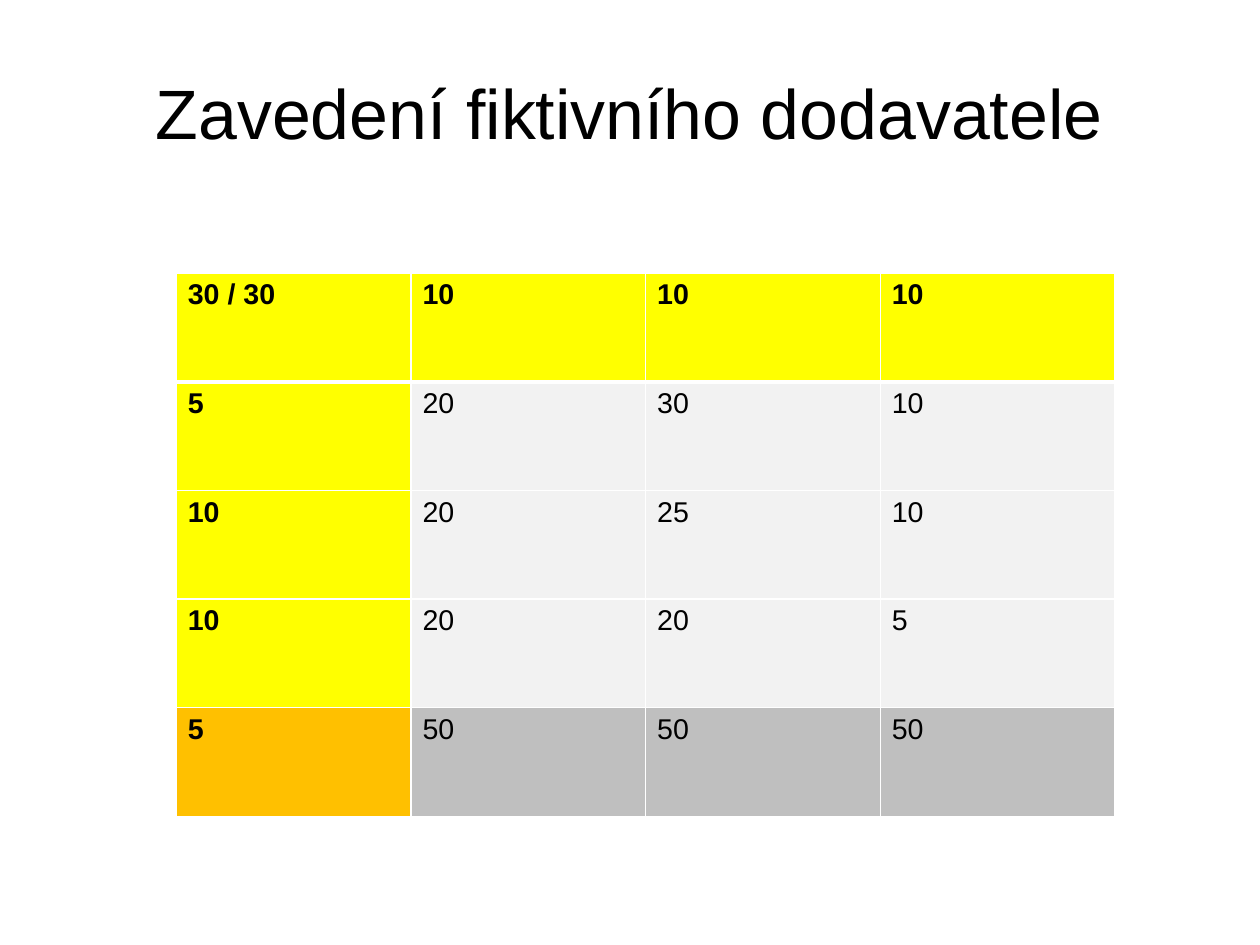
"""Build a slide with a transportation table that includes a fictitious supplier."""
from dataclasses import dataclass
from typing import Any

from lxml import etree
from pptx import Presentation
from pptx import util as u
from pptx.dml.color import RGBColor
from pptx.enum import text
from pptx.oxml import ns


@dataclass(frozen=True)
class Theme:
    font: str = "Arial"
    ink: str = "000000"
    border: str = "FFFFFF"
    heading: str = "FFFF00"
    body: str = "F2F2F2"
    fictitious_heading: str = "FFC000"
    fictitious_body: str = "BFBFBF"
    title_size: int = 44
    cell_size: int = 18
    thin: int = 1
    thick: int = 3


@dataclass(frozen=True)
class Area:
    left: float
    top: float
    width: float
    height: float

    def place(self, deck: Any) -> tuple[int, ...]:
        across, down = deck.slide_width / 100, deck.slide_height / 100
        return (round(self.left * across), round(self.top * down),
                round(self.width * across), round(self.height * down))


@dataclass(frozen=True)
class Supplier:
    values: tuple[str, ...]
    heading_fill: str
    body_fill: str


THEME = Theme()
TITLE_AREA = Area(5, 4, 90, 16.7)
TABLE_AREA = Area(14, 28.9, 74.5, 57.5)
ROWS = (
    Supplier(("30 / 30", "10", "10", "10"), THEME.heading, THEME.heading),
    Supplier(("5", "20", "30", "10"), THEME.heading, THEME.body),
    Supplier(("10", "20", "25", "10"), THEME.heading, THEME.body),
    Supplier(("10", "20", "20", "5"), THEME.heading, THEME.body),
    Supplier(("5", "50", "50", "50"), THEME.fictitious_heading, THEME.fictitious_body),
)


def apply(target: Any, formats: dict[str, Any]) -> None:
    for name, value in formats.items():
        setattr(target, name, value)


def write(para: Any, words: str, size: int, bold: bool = False) -> None:
    span = para.add_run()
    span.text = words
    apply(span.font, {"name": THEME.font, "size": u.Pt(size), "bold": bold})
    span.font.color.rgb = RGBColor.from_string(THEME.ink)


def add_title(deck: Any, page: Any, words: str) -> None:
    frame = page.shapes.add_textbox(*TITLE_AREA.place(deck)).text_frame
    apply(frame, {"word_wrap": True, "vertical_anchor": text.MSO_ANCHOR.MIDDLE,
                  "margin_left": 0, "margin_right": 0, "margin_top": 0, "margin_bottom": 0})
    para = frame.paragraphs[0]
    apply(para, {"alignment": text.PP_ALIGN.CENTER, "line_spacing": 0.9})
    write(para, words, THEME.title_size)


def add_borders(cell: Any, row: int) -> None:
    widths = {"lnL": THEME.thin, "lnR": THEME.thin,
              "lnT": THEME.thick if row == 1 else THEME.thin,
              "lnB": THEME.thick if row == 0 else THEME.thin}
    properties = cell._tc.get_or_add_tcPr()
    for index, (side, width) in enumerate(widths.items()):
        line = etree.Element(ns.qn(f"a:{side}"), w=str(u.Pt(width)))
        fill = etree.SubElement(line, ns.qn("a:solidFill"))
        etree.SubElement(fill, ns.qn("a:srgbClr"), val=THEME.border)
        properties.insert(index, line)


def add_supplier_table(deck: Any, page: Any) -> None:
    table = page.shapes.add_table(len(ROWS), len(ROWS[0].values), *TABLE_AREA.place(deck)).table
    apply(table, {"first_col": True, "horz_banding": False})
    for row, supplier in enumerate(ROWS):
        for column, value in enumerate(supplier.values):
            cell = table.cell(row, column)
            color = supplier.body_fill if column else supplier.heading_fill
            cell.fill.solid()
            cell.fill.fore_color.rgb = RGBColor.from_string(color)
            write(cell.text_frame.paragraphs[0], value, THEME.cell_size, row == 0 or column == 0)
            add_borders(cell, row)


def main() -> None:
    deck = Presentation()
    apply(deck, {"slide_width": u.Cm(28), "slide_height": u.Cm(21)})
    page = deck.slides.add_slide(deck.slide_layouts[6])
    add_title(deck, page, "Zavedení fiktivního dodavatele")
    add_supplier_table(deck, page)
    deck.save("out.pptx")


if __name__ == "__main__":
    main()
